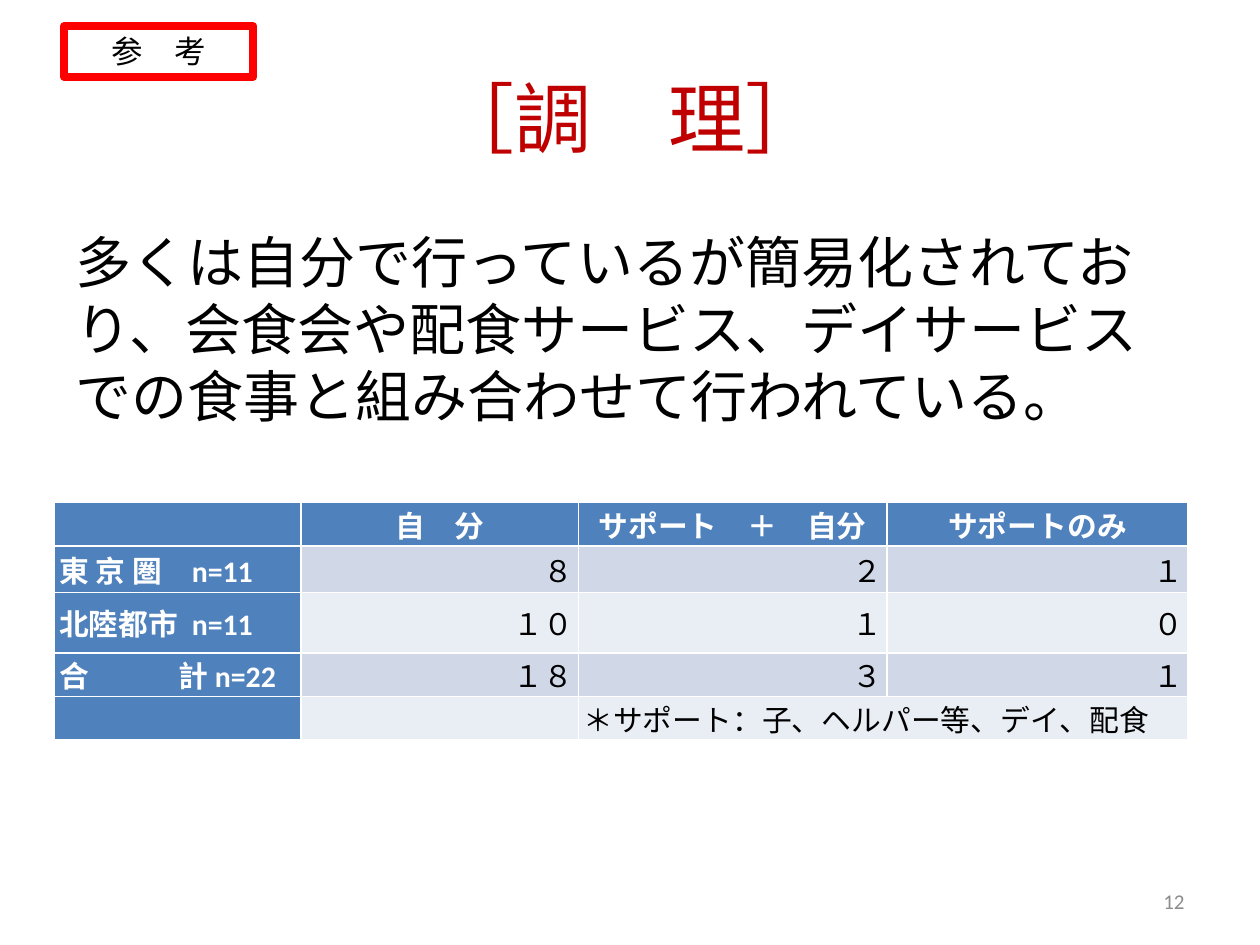
import pptx
import pptx.dml.color
import pptx.enum.shapes
import pptx.enum.text
import pptx.oxml
import pptx.oxml.ns
import pptx.util
from lxml import etree

Cm = pptx.util.Cm
Pt = pptx.util.Pt
RGBColor = pptx.dml.color.RGBColor
ALIGN = pptx.enum.text.PP_ALIGN
ANCHOR = pptx.enum.text.MSO_ANCHOR

BLACK = RGBColor(0x00, 0x00, 0x00)
WHITE = RGBColor(0xFF, 0xFF, 0xFF)
RED = RGBColor(0xFF, 0x00, 0x00)
DARK_RED = RGBColor(0xC0, 0x00, 0x00)
GREY = RGBColor(0x8C, 0x8C, 0x8C)
BLUE = RGBColor(0x4F, 0x81, 0xBD)
BAND_DARK = RGBColor(0xD0, 0xD8, 0xE8)
BAND_LIGHT = RGBColor(0xE9, 0xED, 0xF4)

LATIN_FONT = "Calibri"
JAPANESE_FONT = "Noto Sans CJK JP"

COLUMN_WIDTHS = (4.98, 5.59, 6.22, 6.07)
ROW_HEIGHTS = (0.71, 0.94, 1.22, 0.71, 0.71)
COOKING_ROWS = (
    ("", "自　分", "サポート　＋　自分", "サポートのみ"),
    ("東 京 圏　n=11", "８", "２", "１"),
    ("北陸都市  n=11", "１０", "１", "０"),
    ("合　　　計 n=22", "１８", "３", "１"),
    ("", "", "＊サポート：子、ヘルパー等、デイ、配食", ""),
)


def place(shape, left, top, width, height):
    shape.left, shape.top = Cm(left), Cm(top)
    shape.width, shape.height = Cm(width), Cm(height)


def write(text_frame, text, size, color, font_name, alignment, bold=False):
    text_frame.text = text
    paragraph = text_frame.paragraphs[0]
    paragraph.alignment = alignment
    for font in [paragraph.font] + [run.font for run in paragraph.runs]:
        font.size, font.bold = Pt(size), bold
        font.name = font_name
        font.color.rgb = color
    if font_name == JAPANESE_FONT:
        for run in paragraph.runs:
            latin = run.font._element.find(pptx.oxml.ns.qn("a:latin"))
            east_asian = etree.Element(pptx.oxml.ns.qn("a:ea"), typeface=font_name)
            latin.addnext(east_asian)
    return paragraph


def add_title(slide, left, top, width, height):
    title = slide.shapes.title
    place(title, left, top, width, height)
    title.text_frame.vertical_anchor = ANCHOR.MIDDLE
    write(title.text_frame, "［調　理］", 44, DARK_RED, JAPANESE_FONT, ALIGN.CENTER)


def add_body(slide, left, top, width, height):
    body = slide.placeholders[1]
    place(body, left, top, width, height)
    text = (
        "多くは自分で行っているが簡易化されており、会食会や配食サービス、"
        "デイサービスでの食事と組み合わせて行われている。"
    )
    paragraph = write(body.text_frame, text, 32, BLACK, LATIN_FONT, ALIGN.LEFT)
    properties = paragraph._p.get_or_add_pPr()
    properties.set("marL", "0")
    properties.set("indent", "0")
    properties.insert(0, etree.Element(pptx.oxml.ns.qn("a:buNone")))


def format_cell(cell, text, row, column):
    is_header, is_label = row == 0, column == 0
    is_note = row == len(COOKING_ROWS) - 1
    cell.margin_left = cell.margin_right = Cm(0.1)
    cell.margin_top = cell.margin_bottom = Cm(0)
    cell.vertical_anchor = ANCHOR.MIDDLE
    cell.fill.solid()
    if is_header or is_label:
        cell.fill.fore_color.rgb = BLUE
    else:
        cell.fill.fore_color.rgb = BAND_DARK if row % 2 else BAND_LIGHT
    if is_header:
        alignment = ALIGN.CENTER
    else:
        alignment = ALIGN.LEFT if is_label or is_note else ALIGN.RIGHT
    emphasized = is_header or is_label
    color = WHITE if emphasized else BLACK
    write(cell.text_frame, text, 17, color, LATIN_FONT, alignment, emphasized)


def add_cooking_table(slide, left, top, width, height):
    frame = slide.shapes.add_table(
        len(ROW_HEIGHTS), len(COLUMN_WIDTHS), Cm(left), Cm(top), Cm(width), Cm(height)
    )
    table = frame.table
    table.first_col = True
    for column, share in zip(table.columns, COLUMN_WIDTHS):
        column.width = Cm(width * share / sum(COLUMN_WIDTHS))
    for row, share in zip(table.rows, ROW_HEIGHTS):
        row.height = Cm(height * share / sum(ROW_HEIGHTS))
    for row_index, texts in enumerate(COOKING_ROWS):
        for column_index, text in enumerate(texts):
            cell = table.cell(row_index, column_index)
            format_cell(cell, text, row_index, column_index)
    table.cell(4, 2).merge(table.cell(4, 3))


def add_reference_label(slide, left, top, width, height):
    label = slide.shapes.add_shape(
        pptx.enum.shapes.MSO_SHAPE.RECTANGLE, Cm(left), Cm(top), Cm(width), Cm(height)
    )
    label.shadow.inherit = False
    label.fill.background()
    label.line.color.rgb = RED
    label.line.width = Pt(4.5)
    label.text_frame.vertical_anchor = ANCHOR.TOP
    write(label.text_frame, "参　考", 18, BLACK, JAPANESE_FONT, ALIGN.CENTER)


def add_page_number(slide, left, top, width, height):
    number = slide.shapes.add_textbox(Cm(left), Cm(top), Cm(width), Cm(height))
    number.text_frame.word_wrap = True
    number.text_frame.vertical_anchor = ANCHOR.MIDDLE
    write(number.text_frame, "12", 12, GREY, LATIN_FONT, ALIGN.RIGHT)


def main():
    presentation = pptx.Presentation()
    presentation.slide_width, presentation.slide_height = Cm(25.4), Cm(19.05)
    slide = presentation.slides.add_slide(presentation.slide_layouts[1])
    add_title(slide, 1.27, 0.76, 22.86, 3.18)
    add_body(slide, 1.27, 4.45, 22.86, 12.57)
    add_cooking_table(slide, 1.09, 10.13, 22.86, 4.29)
    add_reference_label(slide, 1.3, 0.53, 3.81, 1.02)
    add_page_number(slide, 18.21, 17.65, 5.92, 1.02)
    presentation.save("out.pptx")


if __name__ == "__main__":
    main()
